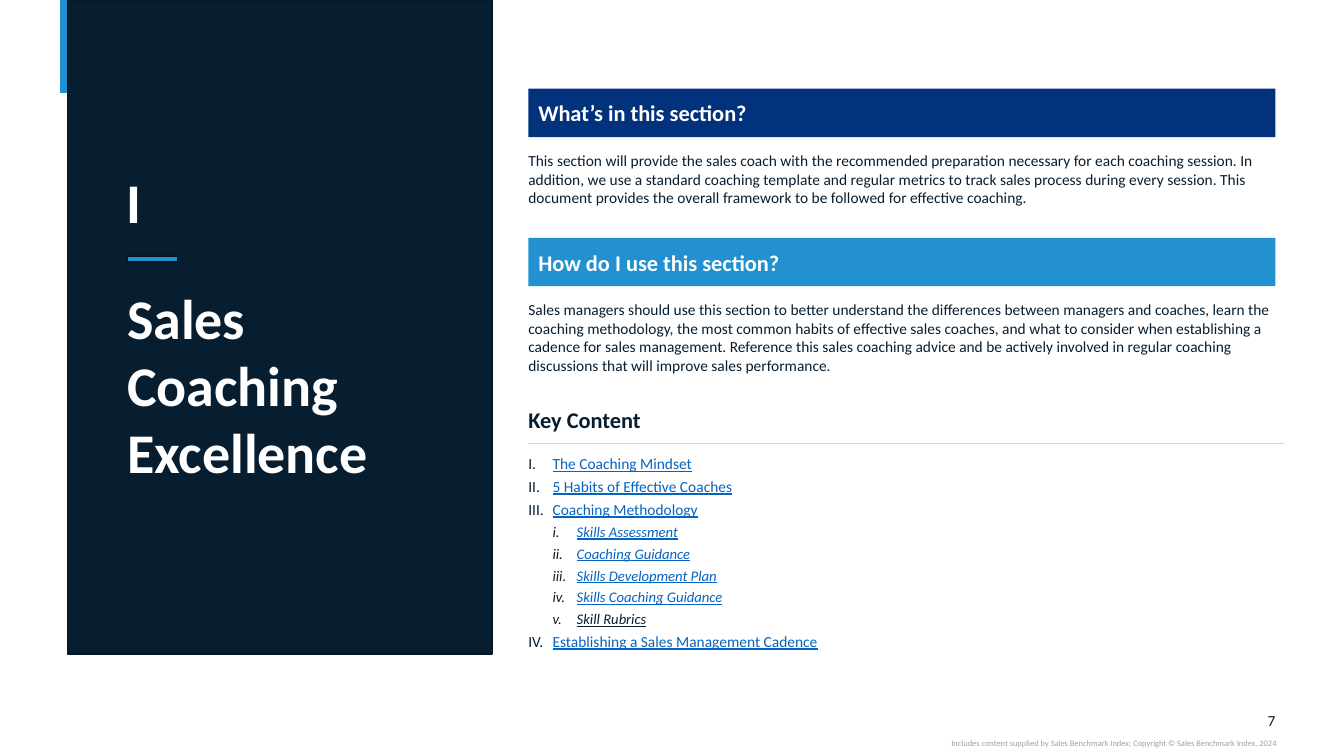
from dataclasses import dataclass

from lxml.etree import SubElement
from pptx import Presentation
from pptx.dml.color import RGBColor
from pptx.enum.shapes import MSO_CONNECTOR as Connector, MSO_SHAPE as Shape
from pptx.enum.text import MSO_ANCHOR as Anchor, MSO_AUTO_SIZE as Fit, PP_ALIGN as Align
from pptx.oxml.ns import qn
from pptx.slide import Slide
from pptx.util import Pt

PX = 9144  # 100 px to the inch


@dataclass(frozen=True)
class Theme:
    font: str = "Calibri"
    navy: str = "071E31"
    edge: str = "051624"
    royal: str = "03327C"
    sky: str = "2391CF"
    link: str = "0563C1"
    white: str = "FFFFFF"
    rule: str = "D9D9D9"
    grey: str = "A0A0A0"
    title: float = 40
    heading: float = 16
    body: float = 11
    sub: float = 10.5
    small: float = 6


THEME = Theme()


@dataclass(frozen=True)
class Box:
    left: int
    top: int
    width: int
    height: int

    def emu(self) -> tuple[int, ...]:
        return tuple(v * PX for v in (self.left, self.top, self.width, self.height))


@dataclass(frozen=True)
class Style:
    size: float
    color: str = THEME.navy
    bold: bool = False
    italic: bool = False
    underline: bool = False


@dataclass(frozen=True)
class Section:
    top: int
    fill: str
    heading: str
    body: str
    body_height: int


@dataclass(frozen=True)
class Entry:
    text: str
    level: int = 0
    color: str = THEME.link


TITLE = Style(THEME.title, THEME.white, bold=True)
BANNER = Style(THEME.heading, THEME.white, bold=True)
HEADING = Style(THEME.heading, bold=True)
BODY = Style(THEME.body)

COLUMN_LEFT, BANNER_WIDTH, COLUMN_WIDTH = 524, 741, 749
BANNER_HEIGHT, BODY_OFFSET = 48, 62
LABEL_LEFT, LABEL_WIDTH = 126, 303
INDENT = 24
NUMBERING = ("romanUcPeriod", "romanLcPeriod")

SECTIONS = (
    Section(88, THEME.royal, "What’s in this section?",
            "This section will provide the sales coach with the recommended preparation "
            "necessary for each coaching session. In addition, we use a standard coaching "
            "template and regular metrics to track sales process during every session. This "
            "document provides the overall framework to be followed for effective coaching.", 56),
    Section(236, THEME.sky, "How do I use this section?",
            "Sales managers should use this section to better understand the differences "
            "between managers and coaches, learn the coaching methodology, the most common "
            "habits of effective sales coaches, and what to consider when establishing a "
            "cadence for sales management. Reference this sales coaching advice and be "
            "actively involved in regular coaching discussions that will improve sales "
            "performance.", 74),
)

CONTENTS = (
    Entry("The Coaching Mindset"),
    Entry("5 Habits of Effective Coaches"),
    Entry("Coaching Methodology"),
    Entry("Skills Assessment", 1),
    Entry("Coaching Guidance", 1),
    Entry("Skills Development Plan", 1),
    Entry("Skills Coaching Guidance", 1),
    Entry("Skill Rubrics", 1, THEME.navy),
    Entry("Establishing a Sales Management Cadence"),
)


def add_run(para, text: str, style: Style) -> None:
    span = para.add_run()
    span.text = text
    font = span.font
    font.name, font.size = THEME.font, Pt(style.size)
    font.bold, font.italic, font.underline = style.bold, style.italic, style.underline
    font.color.rgb = RGBColor.from_string(style.color)


def prepare_frame(frame, anchor=Anchor.TOP) -> None:
    frame.word_wrap = True
    frame.auto_size = Fit.SHAPE_TO_FIT_TEXT
    frame.vertical_anchor = anchor
    frame.margin_left = frame.margin_top = frame.margin_right = frame.margin_bottom = 0


def add_text(page: Slide, box: Box, text: str, style: Style,
             align=Align.LEFT, anchor=Anchor.TOP) -> None:
    frame = page.shapes.add_textbox(*box.emu()).text_frame
    prepare_frame(frame, anchor)
    para = frame.paragraphs[0]
    para.alignment = align
    add_run(para, text, style)


def add_block(page: Slide, box: Box, fill: str, edge: str | None = None):
    block = page.shapes.add_shape(Shape.RECTANGLE, *box.emu())
    block.shadow.inherit = False
    block.fill.solid()
    block.fill.fore_color.rgb = RGBColor.from_string(fill)
    if edge:
        block.line.color.rgb = RGBColor.from_string(edge)
        block.line.width = Pt(1)
    else:
        block.line.fill.background()
    return block


def add_line(page: Slide, start: tuple[int, int], end: tuple[int, int],
             color: str, width: float) -> None:
    line = page.shapes.add_connector(Connector.STRAIGHT, *(v * PX for v in start + end))
    line.line.color.rgb = RGBColor.from_string(color)
    line.line.width = Pt(width)
    SubElement(line.element.spPr, qn("a:effectLst"))


def add_section(page: Slide, section: Section) -> None:
    banner = add_block(page, Box(COLUMN_LEFT, section.top, BANNER_WIDTH, BANNER_HEIGHT),
                       section.fill)
    frame = banner.text_frame
    frame.word_wrap = True
    frame.vertical_anchor = Anchor.MIDDLE
    frame.paragraphs[0].alignment = Align.LEFT
    add_run(frame.paragraphs[0], section.heading, BANNER)
    add_text(page, Box(COLUMN_LEFT, section.top + BODY_OFFSET, COLUMN_WIDTH,
                       section.body_height), section.body, BODY)


def add_contents(page: Slide, box: Box, entries: tuple[Entry, ...]) -> None:
    frame = page.shapes.add_textbox(*box.emu()).text_frame
    prepare_frame(frame)
    for index, entry in enumerate(entries):
        para = frame.add_paragraph() if index else frame.paragraphs[0]
        para.level = entry.level
        para.space_after = Pt(3)
        props = para._p.get_or_add_pPr()
        props.set("marL", str(INDENT * (entry.level + 1) * PX))
        props.set("indent", str(-INDENT * PX))
        SubElement(SubElement(props, qn("a:buClr")), qn("a:srgbClr"), val=THEME.navy)
        SubElement(props, qn("a:buFont"), typeface=THEME.font)
        SubElement(props, qn("a:buAutoNum"), type=NUMBERING[entry.level])
        nested = entry.level > 0
        add_run(para, entry.text, Style(THEME.sub if nested else THEME.body, entry.color,
                                        italic=nested, underline=True))


def main() -> None:
    deck = Presentation()
    deck.slide_width, deck.slide_height = 1333 * PX, 750 * PX
    page = deck.slides.add_slide(deck.slide_layouts[5])

    # Page edge and footer
    add_line(page, (63, 0), (63, 92), THEME.sky, 5)
    add_text(page, Box(1232, 705, 33, 19), "7", BODY, Align.RIGHT, Anchor.MIDDLE)
    add_text(page, Box(750, 732, 516, 10),
             "Includes content supplied by Sales Benchmark Index; "
             "Copyright © Sales Benchmark Index, 2024",
             Style(THEME.small, THEME.grey), Align.RIGHT)

    # Title panel
    panel = add_block(page, Box(67, 0, 421, 649), THEME.navy, THEME.edge)
    title = page.shapes.title
    panel.element.addnext(title.element)
    title.left, title.top, title.width, title.height = Box(
        LABEL_LEFT, 281, LABEL_WIDTH, 202).emu()
    prepare_frame(title.text_frame)
    title.text_frame.paragraphs[0].alignment = Align.LEFT
    add_run(title.text_frame.paragraphs[0], "Sales Coaching Excellence", TITLE)
    add_block(page, Box(LABEL_LEFT, 254, 50, 6), THEME.sky, THEME.edge)
    add_text(page, Box(LABEL_LEFT, 166, LABEL_WIDTH, 67), "I", TITLE)

    # Sections and key content
    for section in SECTIONS:
        add_section(page, section)
    add_text(page, Box(COLUMN_LEFT, 403, COLUMN_WIDTH, 27), "Key Content", HEADING)
    add_line(page, (COLUMN_LEFT, 440), (COLUMN_LEFT + COLUMN_WIDTH, 440), THEME.rule, 0.5)
    add_contents(page, Box(COLUMN_LEFT, 451, COLUMN_WIDTH, 198), CONTENTS)

    deck.save("out.pptx")


if __name__ == "__main__":
    main()
